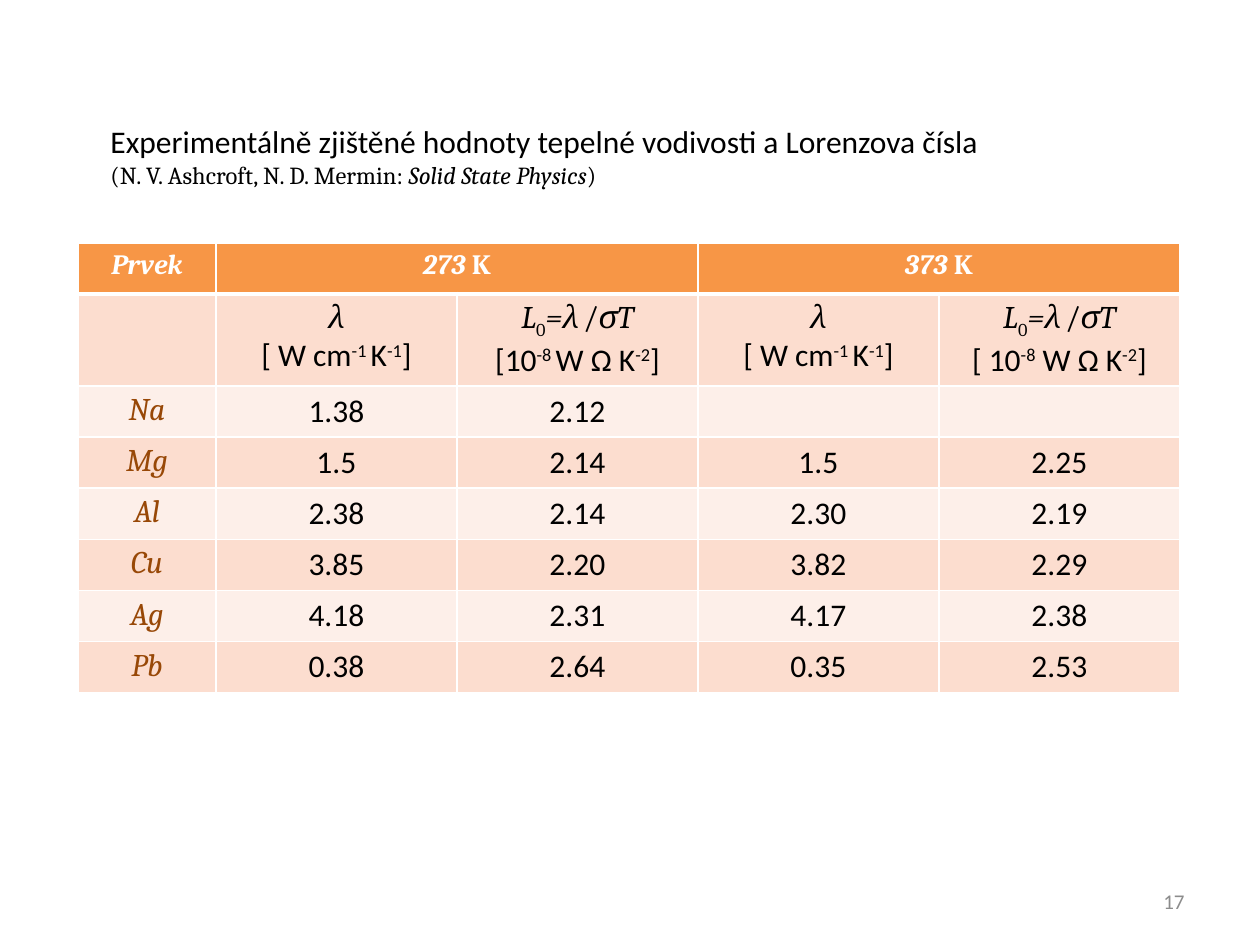
import pptx
import pptx.dml.color
import pptx.enum.text
import pptx.oxml
import pptx.oxml.ns
import pptx.util

ALIGN = pptx.enum.text.PP_ALIGN
ANCHOR = pptx.enum.text.MSO_ANCHOR
SERIF, SANS = "Cambria", "Calibri"
ORANGE, PEACH, PALE, BROWN = "F79646", "FCDDCF", "FDEFE9", "984807"
WHITE, BLACK, GREY = "FFFFFF", "000000", "8C8C8C"
RAISED, LOWERED = {"baseline": 30}, {"baseline": -25}
ITALIC = {"italic": True}

SYMBOL = [("λ", ITALIC)]
CONDUCTIVITY = [("[ W cm", {}), ("-1 ", RAISED), ("K", {}), ("-1", RAISED), ("]", {})]
LORENZ = [("L", ITALIC), ("0", LOWERED), ("=λ", ITALIC),
          (" ", {"size": 10.5, "italic": True}), ("/", {}), ("σT", ITALIC)]
LORENZ_COLD = [("[10", {}), ("-8 ", RAISED), ("W Ω K", {}), ("-2", RAISED), ("]", {})]
LORENZ_HOT = [("[ 10", {}), ("-8", RAISED), (" W Ω K", {}), ("-2", RAISED), ("]", {})]
QUANTITIES = [(SYMBOL, CONDUCTIVITY), (LORENZ, LORENZ_COLD),
              (SYMBOL, CONDUCTIVITY), (LORENZ, LORENZ_HOT)]
ELEMENTS = [
    ("Na", "1.38", "2.12", "", ""),
    ("Mg", "1.5", "2.14", "1.5", "2.25"),
    ("Al", "2.38", "2.14", "2.30", "2.19"),
    ("Cu", "3.85", "2.20", "3.82", "2.29"),
    ("Ag", "4.18", "2.31", "4.17", "2.38"),
    ("Pb", "0.38", "2.64", "0.35", "2.53"),
]


def px(length):
    """Turn px into EMU."""
    return pptx.util.Emu(round(length * 914400 / 126))


def color(value):
    """Turn a hex string into a colour."""
    return pptx.dml.color.RGBColor.from_string(value)


def add_run(paragraph, text, size=18, font=SANS, fill=BLACK, bold=False,
            italic=False, baseline=0):
    """Add one formatted run to a paragraph."""
    run = paragraph.add_run()
    run.text = text
    run.font.size = pptx.util.Pt(size)
    run.font.name = font
    run.font.bold = bold
    run.font.italic = italic
    run.font.color.rgb = color(fill)
    if baseline:
        run._r.get_or_add_rPr().set("baseline", str(baseline * 1000))


def write(frame, text, align=ALIGN.CENTER, new=False, **style):
    """Write a string or a list of styled pieces as one paragraph."""
    paragraph = frame.add_paragraph() if new else frame.paragraphs[0]
    paragraph.alignment = align
    pieces = [(text, {})] if isinstance(text, str) else text
    for piece, changes in pieces:
        add_run(paragraph, piece, **{**style, **changes})


def add_text_box(slide, left, top, width, height):
    """Add a wrapping text box and return its frame."""
    box = slide.shapes.add_textbox(px(left), px(top), px(width), px(height))
    box.text_frame.word_wrap = True
    return box.text_frame


def style_cell(cell, fill, top=1, bottom=1):
    """Give a cell its fill and white borders."""
    properties = cell._tc.get_or_add_tcPr()
    for side, width in (("L", 1), ("R", 1), ("T", top), ("B", bottom)):
        properties.append(pptx.oxml.parse_xml(
            f'<a:ln{side} {pptx.oxml.ns.nsdecls("a")} w="{width * 12700}">'
            f'<a:solidFill><a:srgbClr val="{WHITE}"/></a:solidFill></a:ln{side}>'))
    cell.fill.solid()
    cell.fill.fore_color.rgb = color(fill)


def add_heading(slide, left, top, width, height):
    """Place the title and its source."""
    frame = add_text_box(slide, left, top, width, height)
    frame.auto_size = pptx.enum.text.MSO_AUTO_SIZE.SHAPE_TO_FIT_TEXT
    write(frame, "Experimentálně zjištěné hodnoty tepelné vodivosti a Lorenzova čísla",
          align=ALIGN.LEFT)
    source = [("(N. V. Ashcroft, N. D. Mermin: ", {}),
              ("Solid State Physics", ITALIC), (")", {})]
    write(frame, source, align=ALIGN.LEFT, new=True, size=14, font=SERIF)


def add_values_table(slide, left, top, width, first_width=138, row_height=51, unit_height=92):
    """Place the table of conductivities and Lorenz numbers."""
    row_count, column_count = len(ELEMENTS) + 2, len(ELEMENTS[0])
    height = row_height * (row_count - 1) + unit_height
    table = slide.shapes.add_table(row_count, column_count, px(left), px(top),
                                   px(width), px(height)).table
    table.horz_banding = False
    for index, column in enumerate(table.columns):
        column.width = px((width - first_width) / (column_count - 1) if index else first_width)
    for index, row in enumerate(table.rows):
        row.height = px(unit_height if index == 1 else row_height)
        fill = ORANGE if index == 0 else PEACH if index % 2 else PALE
        for cell in row.cells:
            style_cell(cell, fill, top=3 if index == 1 else 1, bottom=1 if index else 3)

    header = {"size": 16, "font": SERIF, "fill": WHITE, "bold": True}
    write(table.cell(0, 0).text_frame, "Prvek", italic=True, **header)
    for column, temperature in ((1, "273 "), (3, "373 ")):
        table.cell(0, column).merge(table.cell(0, column + 1))
        write(table.cell(0, column).text_frame, [(temperature, ITALIC), ("K", {})], **header)
    for column, (quantity, unit) in enumerate(QUANTITIES, 1):
        frame = table.cell(1, column).text_frame
        write(frame, quantity, font=SERIF)
        write(frame, unit, new=True)
    for row, (element, *values) in enumerate(ELEMENTS, 2):
        write(table.cell(row, 0).text_frame, element, font=SERIF, fill=BROWN, italic=True)
        for column, value in enumerate(values, 1):
            if value:
                write(table.cell(row, column).text_frame, value)


def add_page_number(slide, left, top, width, height):
    """Place the page number."""
    frame = add_text_box(slide, left, top, width, height)
    frame.vertical_anchor = ANCHOR.MIDDLE
    write(frame, "17", align=ALIGN.RIGHT, size=12, fill=GREY)


def main():
    """Build and save the presentation."""
    presentation = pptx.Presentation()
    presentation.slide_width, presentation.slide_height = px(1260), px(945)
    slide = presentation.slides.add_slide(presentation.slide_layouts[6])
    add_values_table(slide, 78, 243, 1102)
    add_heading(slide, 98, 116, 1053, 81)
    add_page_number(slide, 903, 876, 294, 50)
    presentation.save("out.pptx")


if __name__ == "__main__":
    main()
